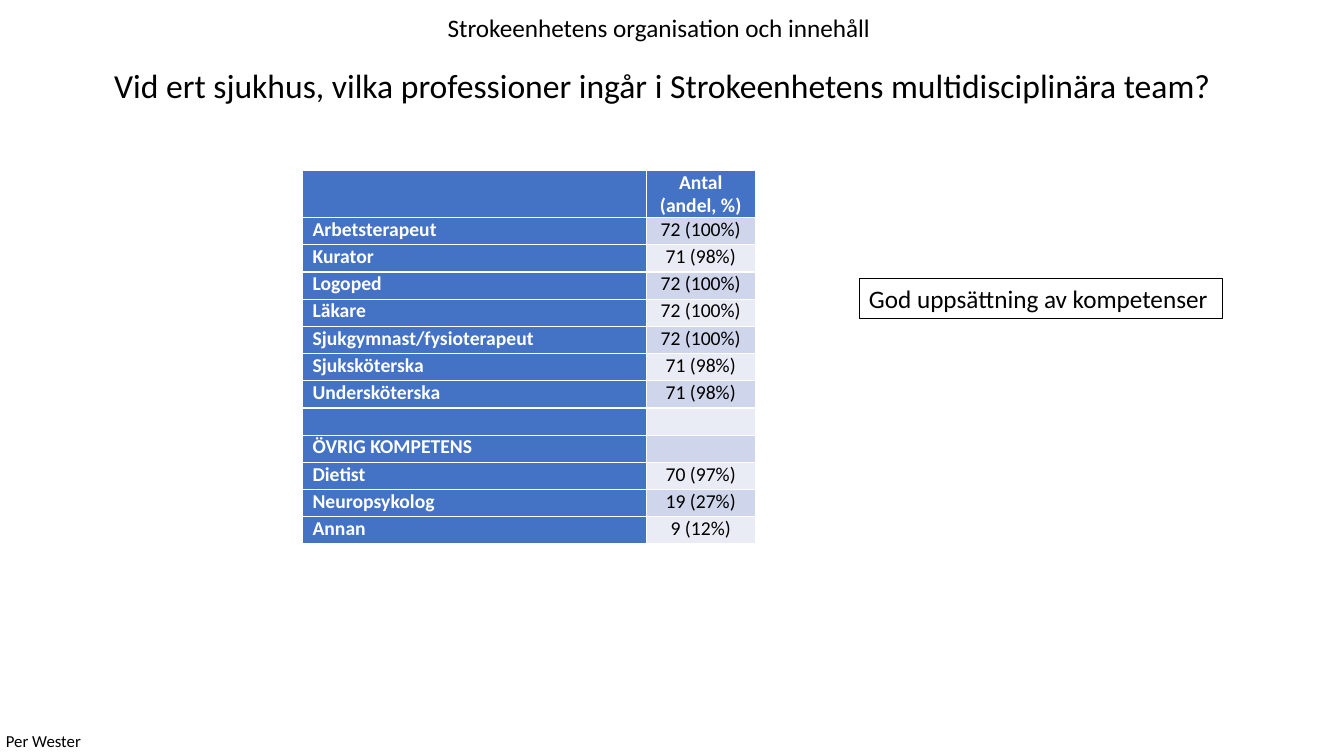
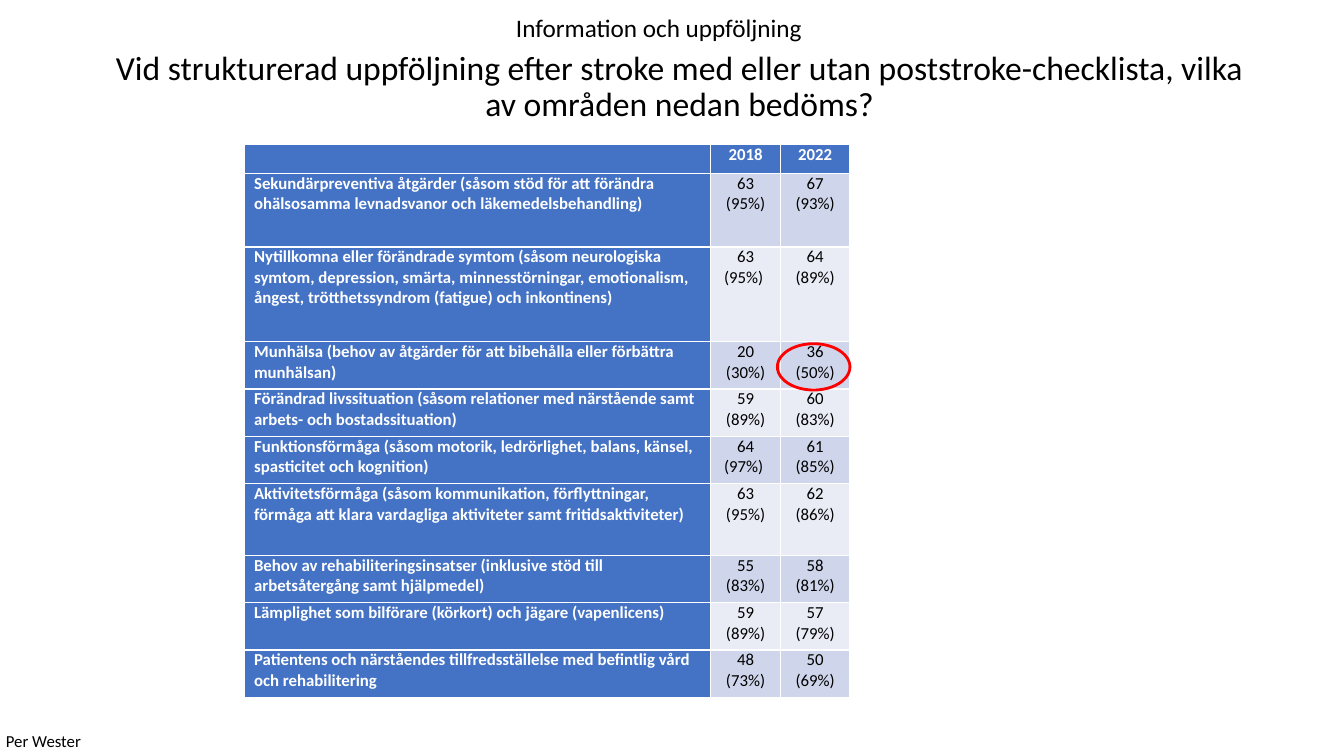
from pptx import Presentation
from pptx.dml.color import RGBColor
from pptx.enum.shapes import MSO_SHAPE as Shape
from pptx.enum.text import MSO_ANCHOR as Anchor, PP_ALIGN as Align
from pptx.util import Inches, Pt

FONT = "Calibri"
BLACK, WHITE, RED = "000000", "FFFFFF", "FF0000"
BLUE = "4472C4"
BANDS = ("CFD5EA", "E9EBF5")
AUTHOR = "Per Wester"

TEAM = {
    "section": "Strokeenhetens organisation och innehåll",
    "question": "Vid ert sjukhus, vilka professioner ingår i Strokeenhetens multidisciplinära team?",
    "question_left": 0.82,
    "table_at": (3, 1.69),
    "size": 14,
    "columns": (3.41, 1.08),
    "heights": [0.47] + [0.27] * 12,
    "rows": [
        ("", "Antal (andel, %)"),
        ("Arbetsterapeut", "72 (100%)"),
        ("Kurator", "71 (98%)"),
        ("Logoped", "72 (100%)"),
        ("Läkare", "72 (100%)"),
        ("Sjukgymnast/fysioterapeut", "72 (100%)"),
        ("Sjuksköterska", "71 (98%)"),
        ("Undersköterska", "71 (98%)"),
        ("", ""),
        ("ÖVRIG KOMPETENS", ""),
        ("Dietist", "70 (97%)"),
        ("Neuropsykolog", "19 (27%)"),
        ("Annan", "9 (12%)"),
    ],
}
FOLLOW_UP = {
    "section": "Information och uppföljning",
    "question": "Vid strukturerad uppföljning efter stroke med eller utan poststroke-checklista, "
                "vilka av områden nedan bedöms?",
    "question_left": 0.99,
    "table_at": (2.42, 1.43),
    "size": 12,
    "columns": (4.63, 0.69, 0.69),
    "heights": [0.29, 0.73, 0.94, 0.47, 0.47, 0.47, 0.71, 0.47, 0.47, 0.47],
    "rows": [
        ("", "2018", "2022"),
        ("Sekundärpreventiva åtgärder (såsom stöd för att förändra ohälsosamma levnadsvanor "
         "och läkemedelsbehandling)", "63 (95%)", "67 (93%)"),
        ("Nytillkomna eller förändrade symtom (såsom neurologiska symtom, depression, smärta, "
         "minnesstörningar, emotionalism, ångest, trötthetssyndrom (fatigue) och inkontinens)",
         "63 (95%) ", "64 (89%)"),
        ("Munhälsa (behov av åtgärder för att bibehålla eller förbättra munhälsan)",
         "20 (30%)", "36 (50%)"),
        ("Förändrad livssituation (såsom relationer med närstående samt arbets- och "
         "bostadssituation)", "59 (89%)", "60 (83%)"),
        ("Funktionsförmåga (såsom motorik, ledrörlighet, balans, känsel, spasticitet och "
         "kognition)", "64 (97%) ", "61 (85%)"),
        ("Aktivitetsförmåga (såsom kommunikation, förflyttningar, förmåga att klara vardagliga "
         "aktiviteter samt fritidsaktiviteter)", "63 (95%)", "62 (86%)"),
        ("Behov av rehabiliteringsinsatser (inklusive stöd till arbetsåtergång samt hjälpmedel)",
         "55 (83%)", "58 (81%)"),
        ("Lämplighet som bilförare (körkort) och jägare (vapenlicens)", "59 (89%)", "57 (79%)"),
        ("Patientens och närståendes tillfredsställelse med befintlig vård och rehabilitering",
         "48 (73%)", "50 (69%)"),
    ],
}
COMMENT = "God uppsättning av kompetenser"


def rgb(value):
    return RGBColor.from_string(value)


def apply(target, values):
    for name, value in values.items():
        setattr(target, name, value)


def write(frame, text, size, color=BLACK, bold=False, **paragraph_format):
    paragraph = frame.paragraphs[0]
    apply(paragraph, paragraph_format)
    if not text:
        paragraph._p.get_or_add_endParaRPr().set("sz", str(size * 100))
        return
    run = paragraph.add_run()
    run.text = text
    apply(run.font, {"name": FONT, "size": Pt(size), "bold": bold})
    run.font.color.rgb = rgb(color)


def add_text(slide, text, box, size, wrap=True, anchor=Anchor.TOP, **paragraph_format):
    frame = slide.shapes.add_textbox(*map(Inches, box)).text_frame
    apply(frame, {"word_wrap": wrap, "vertical_anchor": anchor})
    write(frame, text, size, **paragraph_format)


def add_outline(slide, kind, box, color, width):
    outline = slide.shapes.add_shape(kind, *map(Inches, box))
    outline.shadow.inherit = False
    outline.fill.background()
    outline.line.color.rgb = rgb(color)
    outline.line.width = Pt(width)
    return outline


def add_answers(slide, content):
    rows, columns, heights = content["rows"], content["columns"], content["heights"]
    box = (*content["table_at"], sum(columns), sum(heights))
    answers = slide.shapes.add_table(len(rows), len(columns), *map(Inches, box)).table
    answers.first_col = True
    for column, width in zip(answers.columns, columns):
        column.width = Inches(width)
    for r, (texts, height) in enumerate(zip(rows, heights)):
        answers.rows[r].height = Inches(height)
        for c, text in enumerate(texts):
            heading = r == 0 or c == 0
            cell = answers.cell(r, c)
            apply(cell, {"margin_top": 0, "margin_bottom": 0,
                         "margin_left": Inches(0.1), "margin_right": Inches(0.1)})
            cell.fill.solid()
            cell.fill.fore_color.rgb = rgb(BLUE if heading else BANDS[(r - 1) % 2])
            write(cell.text_frame, text, content["size"], WHITE if heading else BLACK, heading,
                  alignment=Align.CENTER if c else Align.LEFT)


def add_survey_slide(deck, content):
    slide = deck.slides.add_slide(deck.slide_layouts[6])
    add_text(slide, content["question"], (content["question_left"], 0.37, 11.5, 1), 24,
             anchor=Anchor.MIDDLE, alignment=Align.CENTER, line_spacing=0.9)
    add_answers(slide, content)
    add_text(slide, content["section"], (3.2, 0.07, 6.67, 0.4), 18, alignment=Align.CENTER)
    add_text(slide, AUTHOR, (-0.04, 7.2, 0.95, 0.3), 12, wrap=False)
    return slide


def main():
    deck = Presentation()
    apply(deck, {"slide_width": Inches(13.33), "slide_height": Inches(7.5)})
    team = add_survey_slide(deck, TEAM)
    comment = add_outline(team, Shape.RECTANGLE, (8.52, 2.76, 3.61, 0.4), BLACK, 0.75)
    comment.text_frame.word_wrap = False
    write(comment.text_frame, COMMENT, 18, alignment=Align.LEFT)
    follow_up = add_survey_slide(deck, FOLLOW_UP)
    add_outline(follow_up, Shape.OVAL, (7.71, 3.41, 0.72, 0.46), RED, 2)
    deck.save("out.pptx")


if __name__ == "__main__":
    main()
